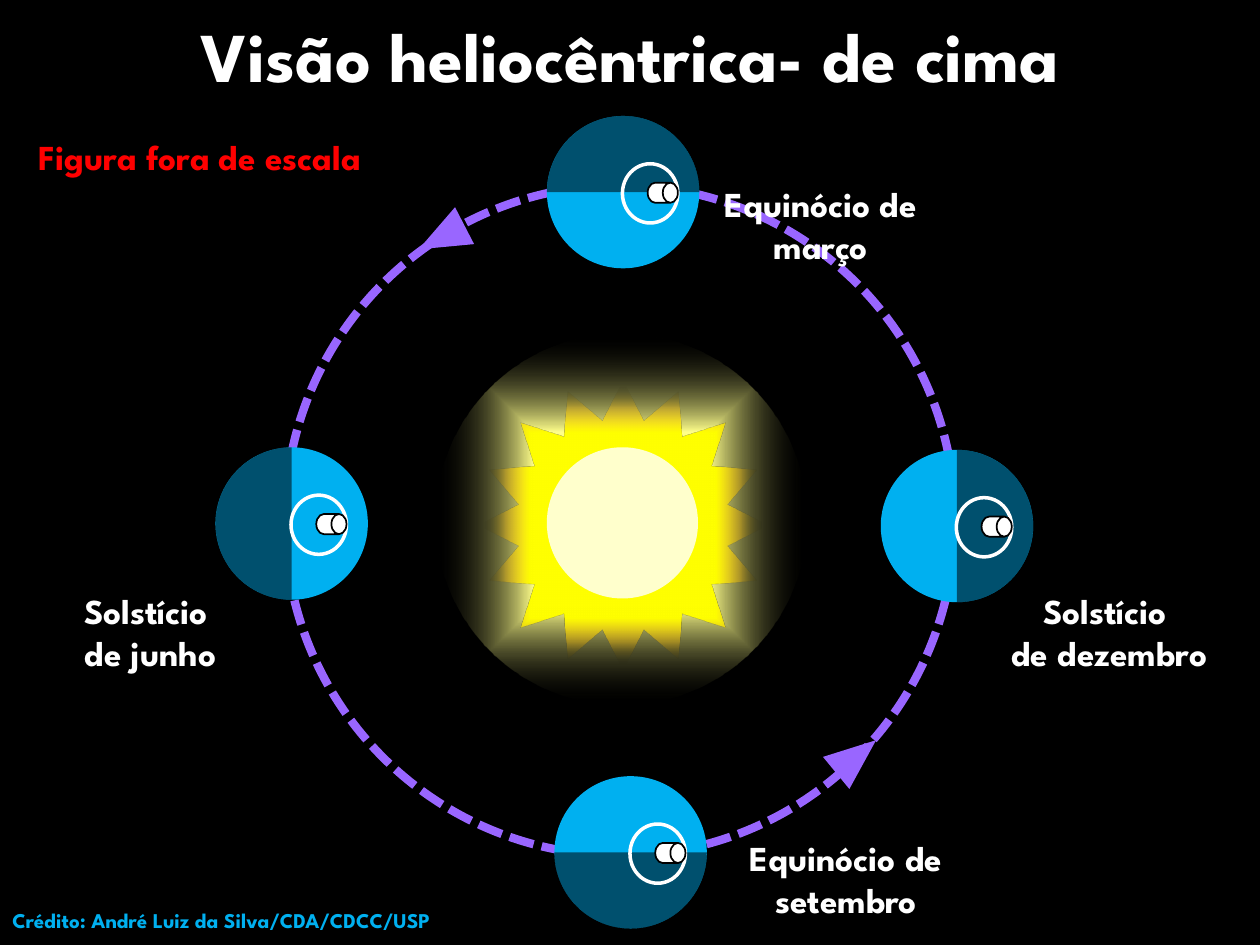
import pptx
import pptx.dml.color
import pptx.enum.dml
import pptx.enum.shapes
import pptx.enum.text
import pptx.oxml
import pptx.oxml.ns
import pptx.util

Inches = pptx.util.Inches
Pt = pptx.util.Pt
RGBColor = pptx.dml.color.RGBColor
Shape = pptx.enum.shapes.MSO_SHAPE
Align = pptx.enum.text.PP_ALIGN
Anchor = pptx.enum.text.MSO_ANCHOR
AutoSize = pptx.enum.text.MSO_AUTO_SIZE
qn = pptx.oxml.ns.qn

BLACK = RGBColor(0x00, 0x00, 0x00)
WHITE = RGBColor(0xFF, 0xFF, 0xFF)
RED = RGBColor(0xFF, 0x00, 0x00)
PURPLE = RGBColor(0x99, 0x66, 0xFF)
BLUE = RGBColor(0x00, 0xB0, 0xF0)
CREAM = RGBColor(0xFF, 0xFF, 0xCC)
YELLOW = RGBColor(0xFF, 0xFF, 0x00)
PALE_YELLOW = RGBColor(0xFF, 0xFF, 0x8B)
AMBER = RGBColor(0xFF, 0xC0, 0x00)

FONT = "League Spartan"
EARTH_SIZE = 1.21
EARTHS = [(1.71, 3.55, 180), (6.99, 3.57, 0), (4.4, 6.16, 90), (4.34, 0.92, 270)]
ARROWS = [(3.34, 1.68, 242.7), (6.63, 5.8, 50.6)]
LABELS = [
    (["Solstício ", "de junho"], (0.31, 4.63, 1.77, 0.77)),
    (["Solstício ", "de dezembro"], (7.76, 4.63, 2.09, 0.77)),
    (["Equinócio de março"], (5.63, 1.4, 1.77, 0.77)),
    (["Equinócio de setembro"], (5.67, 6.59, 2.09, 0.77)),
]


def write_text(text_frame, lines, size, color, alignment):
    font_format = {"name": FONT, "size": Pt(size), "bold": True}
    for index, line in enumerate(lines):
        paragraph = text_frame.add_paragraph() if index else text_frame.paragraphs[0]
        paragraph.alignment = alignment
        run = paragraph.add_run()
        run.text = line
        for name, value in font_format.items():
            setattr(run.font, name, value)
        run.font.color.rgb = color


def add_title(slide, text):
    title = slide.shapes.title
    box = {"left": 0.75, "top": 0.06, "width": 8.5, "height": 0.75}
    for name, value in box.items():
        setattr(title, name, Inches(value))
    title.text_frame.vertical_anchor = Anchor.MIDDLE
    write_text(title.text_frame, [text], 40, WHITE, Align.CENTER)


def add_label(slide, lines, box, size=20, color=WHITE, alignment=Align.CENTER):
    text_frame = slide.shapes.add_textbox(*map(Inches, box)).text_frame
    frame_format = {"word_wrap": True, "auto_size": AutoSize.SHAPE_TO_FIT_TEXT}
    for name, value in frame_format.items():
        setattr(text_frame, name, value)
    write_text(text_frame, lines, size, color, alignment)


def add_figure(shapes, kind, box, fill=None, line=None, width=0, rotation=0):
    shape = shapes.add_shape(kind, *map(Inches, box))
    shape.shadow.inherit = False
    shape.rotation = rotation
    if fill is None:
        shape.fill.background()
    else:
        shape.fill.solid()
        shape.fill.fore_color.rgb = fill
    if line is None:
        shape.line.fill.background()
    else:
        shape.line.color.rgb = line
        shape.line.width = Pt(width)
    return shape


def set_opacity(color_element, percent):
    alpha = pptx.oxml.parse_xml(
        f'<a:alpha {pptx.oxml.ns.nsdecls("a")} val="{percent * 1000}"/>'
    )
    color_element.append(alpha)


def set_radial_gradient(shape, stops):
    stop_xml = "".join(
        f'<a:gs pos="{position * 1000}"><a:srgbClr val="{color}">'
        f'<a:alpha val="{opacity * 1000}"/></a:srgbClr></a:gs>'
        for position, color, opacity in stops
    )
    gradient = pptx.oxml.parse_xml(
        f'<a:gradFill {pptx.oxml.ns.nsdecls("a")} rotWithShape="1">'
        f'<a:gsLst>{stop_xml}</a:gsLst><a:path path="shape">'
        '<a:fillToRect l="50000" t="50000" r="50000" b="50000"/>'
        "</a:path></a:gradFill>"
    )
    properties = shape.element.spPr
    properties.replace(properties.find(qn("a:solidFill")), gradient)


def add_orbit(slide):
    box = (2.26, 1.47, 5.32, 5.32)
    orbit = add_figure(slide.shapes, Shape.OVAL, box, line=PURPLE, width=4.75)
    orbit.line.dash_style = pptx.enum.dml.MSO_LINE.SQUARE_DOT
    dash = orbit.line._get_or_add_ln().find(qn("a:prstDash"))
    dash.set("val", "sysDash")


def add_sun(slide):
    shapes = slide.shapes.add_group_shape().shapes
    glow = add_figure(shapes, Shape.OVAL, (3.46, 2.65, 2.94, 2.94), YELLOW)
    set_radial_gradient(
        glow, [(0, YELLOW, 100), (47, PALE_YELLOW, 100), (100, BLACK, 2)]
    )
    rays = add_figure(shapes, Shape.STAR_16_POINT, (3.8, 3.02, 2.29, 2.29), YELLOW)
    rays.adjustments[0] = 0.367
    set_radial_gradient(rays, [(64, YELLOW, 100), (81, AMBER, 36), (96, BLACK, 0)])
    add_figure(shapes, Shape.OVAL, (4.34, 3.55, 1.2, 1.2), CREAM)


def add_earth(slide, left, top, night_rotation):
    shapes = slide.shapes.add_group_shape().shapes
    globe = (left, top, EARTH_SIZE, EARTH_SIZE)
    add_figure(shapes, Shape.OVAL, globe, BLUE)
    night = add_figure(shapes, Shape.CHORD, globe, BLACK, rotation=night_rotation)
    night.adjustments[0] = 54
    night.adjustments[1] = 162
    properties = night.element.spPr
    properties.find(qn("a:xfrm")).set("flipH", "1")
    set_opacity(properties.find(qn("a:solidFill"))[0], 54)
    polar_circle = (left + 0.6, top + 0.38, 0.44, 0.47)
    add_figure(shapes, Shape.OVAL, polar_circle, line=WHITE, width=2)
    axis_box = (left + 0.84, top + 0.49, 0.16, 0.24)
    axis = add_figure(shapes, Shape.CAN, axis_box, WHITE, BLACK, 1, 90)
    axis.adjustments[0] = 0.75


def main():
    presentation = pptx.Presentation()
    presentation.slide_width = Inches(10)
    presentation.slide_height = Inches(7.5)
    slide = presentation.slides.add_slide(presentation.slide_layouts[5])
    slide.background.fill.solid()
    slide.background.fill.fore_color.rgb = BLACK
    add_title(slide, "Visão heliocêntrica- de cima")
    add_orbit(slide)
    add_sun(slide)
    for left, top, rotation in ARROWS:
        box = (left, top, 0.33, 0.41)
        add_figure(
            slide.shapes, Shape.ISOSCELES_TRIANGLE, box, PURPLE, rotation=rotation
        )
    for lines, box in LABELS:
        add_label(slide, lines, box)
    credit = "Crédito: André Luiz da Silva/CDA/CDCC/USP"
    add_label(slide, [credit], (0, 7.15, 10, 0.3), 12, BLUE, Align.LEFT)
    scale_note = "Figura fora de escala"
    add_label(slide, [scale_note], (0.21, 1.03, 3.54, 0.44), 20, RED, Align.LEFT)
    for left, top, rotation in EARTHS:
        add_earth(slide, left, top, rotation)
    presentation.save("out.pptx")


if __name__ == "__main__":
    main()
